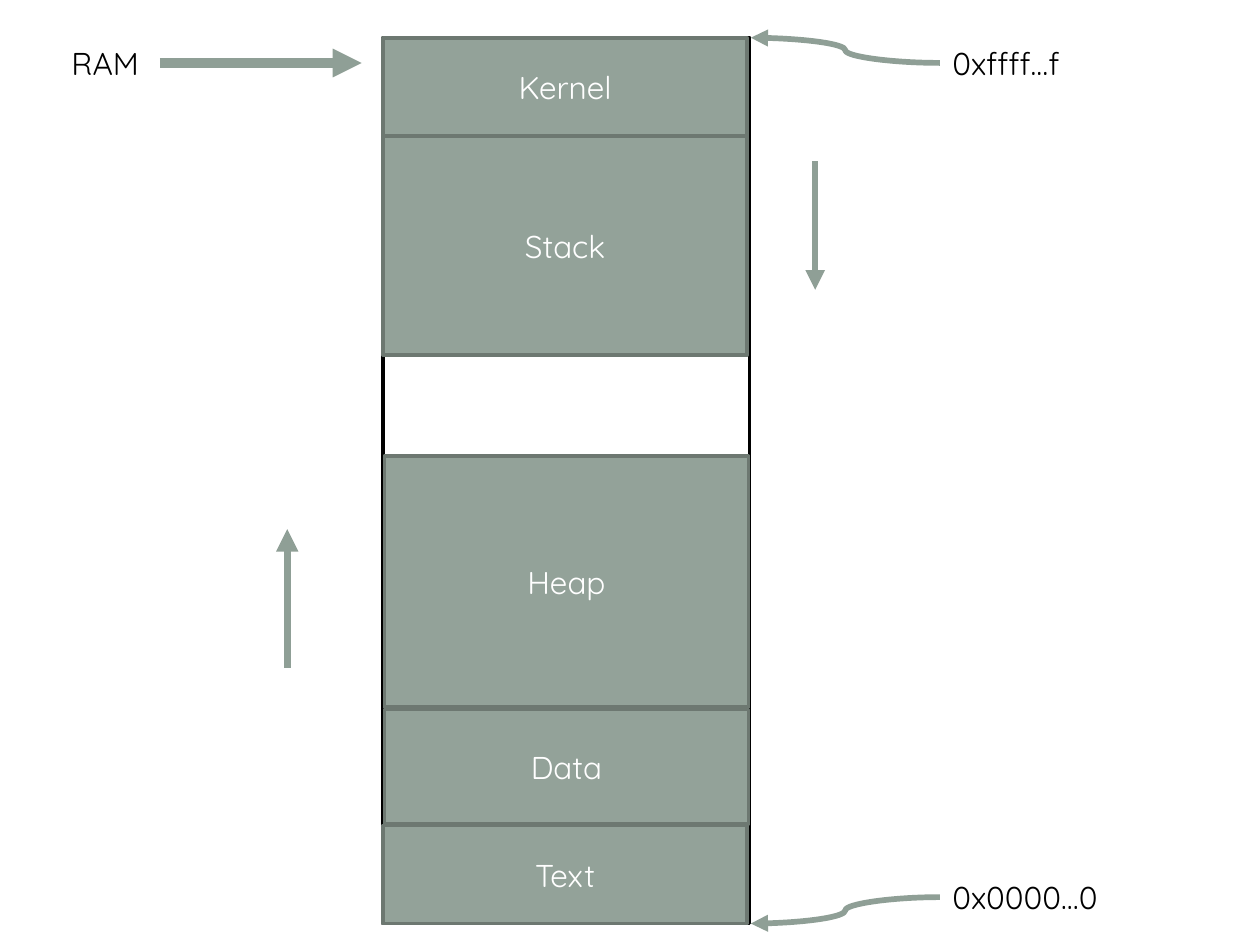
from pptx import Presentation
from pptx.dml.color import RGBColor
from pptx.enum.shapes import MSO_CONNECTOR as Connector, MSO_SHAPE as Shape
from pptx.enum.text import MSO_ANCHOR as Anchor, MSO_AUTO_SIZE as AutoSize, PP_ALIGN as Align
from pptx.oxml.ns import qn
from pptx.util import Inches, Pt
from lxml.etree import SubElement

COLORS = {
    "black": "000000",
    "white": "FFFFFF",
    "segment": "93A299",
    "border": "6D7871",
    "arrow": "8F9F96",
}


class MemorySlide:
    """Holds the style and the current slide."""

    font_format = {"name": "Quicksand", "size": Pt(18)}
    border_width = Pt(2)

    def __init__(self, presentation):
        self.slide = presentation.slides.add_slide(presentation.slide_layouts[6])

    def color(self, name):
        return RGBColor.from_string(COLORS[name])

    def add_text(self, frame, text, color, align):
        paragraph = frame.paragraphs[0]
        paragraph.alignment = align
        run = paragraph.add_run()
        run.text = text
        for name, value in self.font_format.items():
            setattr(run.font, name, value)
        run.font.color.rgb = self.color(color)

    def box(self, left, top, width, height, border, fill=None, text=None):
        shape = self.slide.shapes.add_shape(
            Shape.RECTANGLE, *map(Inches, (left, top, width, height)))
        shape.shadow.inherit = False
        shape.line.color.rgb = self.color(border)
        shape.line.width = self.border_width
        if fill:
            shape.fill.solid()
            shape.fill.fore_color.rgb = self.color(fill)
        else:
            shape.fill.background()
        if text:
            shape.text_frame.vertical_anchor = Anchor.MIDDLE
            self.add_text(shape.text_frame, text, "white", Align.CENTER)

    def label(self, text, left, top, width, align=Align.LEFT):
        shape = self.slide.shapes.add_textbox(*map(Inches, (left, top, width, 0.4)))
        frame_format = {"word_wrap": True, "auto_size": AutoSize.SHAPE_TO_FIT_TEXT}
        for name, value in frame_format.items():
            setattr(shape.text_frame, name, value)
        self.add_text(shape.text_frame, text, "black", align)

    def arrow(self, start, end, width, kind=Connector.STRAIGHT):
        connector = self.slide.shapes.add_connector(kind, *map(Inches, start + end))
        connector.line.color.rgb = self.color("arrow")
        connector.line.width = Pt(width)
        properties = connector.element.spPr
        SubElement(properties.find(qn("a:ln")), qn("a:tailEnd"), type="triangle")
        SubElement(properties, qn("a:effectLst"))


def main():
    presentation = Presentation()
    presentation.slide_width = Inches(10)
    presentation.slide_height = Inches(7.5)
    memory = MemorySlide(presentation)

    # Memory outline
    memory.box(3.04, 0.3, 2.91, 7.03, "black")

    # RAM label and pointer
    memory.label("RAM", 0.4, 0.3, 0.87, Align.CENTER)
    memory.arrow((1.27, 0.5), (2.87, 0.5), 5.5)

    # Lowest and highest address
    for address, label_top, edge in (("0x0000…0", 6.92, 7.33), ("0xffff…f", 0.3, 0.3)):
        memory.label(address, 7.46, label_top, 2.13)
        memory.arrow((7.46, label_top + 0.2), (5.96, edge), 3.25, Connector.CURVE)

    # Memory segments
    segments = (
        ("Kernel", 3.04, 0.3, 0.78),
        ("Text", 3.04, 6.55, 0.78),
        ("Data", 3.05, 5.63, 0.91),
        ("Heap", 3.05, 3.62, 1.99),
        ("Stack", 3.04, 1.08, 1.74),
    )
    for name, left, top, height in segments:
        memory.box(left, top, 2.89, height, "border", "segment", name)

    # Growth of heap and stack
    memory.arrow((2.28, 5.3), (2.28, 4.2), 4.25)
    memory.arrow((6.47, 1.28), (6.47, 2.3), 3.75)

    presentation.save("out.pptx")


if __name__ == "__main__":
    main()
